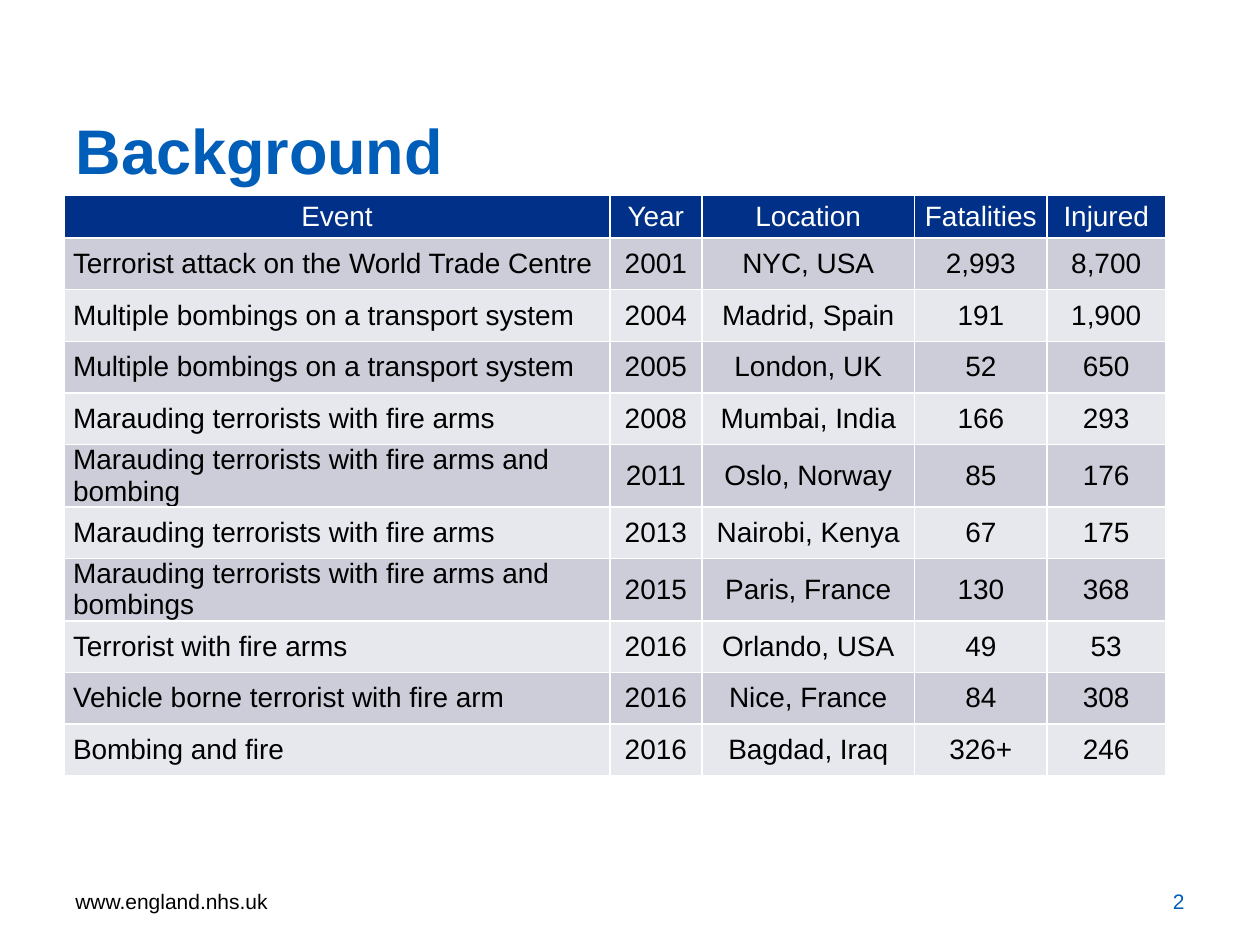
"""Build the Background slide: a table of terrorist events and their casualties."""
from pptx import Presentation
from pptx import util as u
from pptx.dml.color import RGBColor
from pptx.enum import text

BLUE = RGBColor(0x00, 0x5E, 0xB8)
NAVY = RGBColor(0x00, 0x30, 0x87)
BLACK = RGBColor(0x00, 0x00, 0x00)
WHITE = RGBColor(0xFF, 0xFF, 0xFF)
BANDS = [RGBColor(0xE7, 0xE8, 0xED), RGBColor(0xCC, 0xCD, 0xD9)]
LEFT, MID, RIGHT = text.PP_ALIGN.LEFT, text.PP_ALIGN.CENTER, text.PP_ALIGN.RIGHT

COLS = [4.33, 0.73, 1.69, 1.05, 0.94]
HEAD, ROW = 0.34, 0.41
EVENTS = [
    ("Event", "Year", "Location", "Fatalities", "Injured"),
    ("Terrorist attack on the World Trade Centre", "2001", "NYC, USA", "2,993", "8,700"),
    ("Multiple bombings on a transport system", "2004", "Madrid, Spain", "191", "1,900"),
    ("Multiple bombings on a transport system", "2005", "London, UK", "52", "650"),
    ("Marauding terrorists with fire arms", "2008", "Mumbai, India", "166", "293"),
    ("Marauding terrorists with fire arms and bombing", "2011", "Oslo, Norway", "85", "176"),
    ("Marauding terrorists with fire arms", "2013", "Nairobi, Kenya", "67", "175"),
    ("Marauding terrorists with fire arms and bombings", "2015", "Paris, France", "130", "368"),
    ("Terrorist with fire arms", "2016", "Orlando, USA", "49", "53"),
    ("Vehicle borne terrorist with fire arm", "2016", "Nice, France", "84", "308"),
    ("Bombing and fire", "2016", "Bagdad, Iraq", "326+", "246"),
]


def write(frame, words, size, color, align=LEFT, bold=False):
    """Put one styled paragraph in a text frame."""
    frame.text = words
    para = frame.paragraphs[0]
    para.alignment = align
    font = para.runs[0].font
    font.name, font.size, font.bold = "Arial", u.Pt(size), bold
    font.color.rgb = color


deck = Presentation()
deck.slide_width, deck.slide_height = u.Inches(10), u.Inches(7.5)
slide = deck.slides.add_slide(deck.slide_layouts[5])

title = slide.shapes.title
title.left, title.top = u.Inches(0.5), u.Inches(0.82)
title.width, title.height = u.Inches(8.05), u.Inches(0.73)
title.text_frame.vertical_anchor = text.MSO_ANCHOR.MIDDLE
write(title.text_frame, "Background", 36, BLUE, bold=True)

high = HEAD + ROW * (len(EVENTS) - 1)
grid = slide.shapes.add_table(
    len(EVENTS), len(COLS), u.Inches(0.51), u.Inches(1.55),
    u.Inches(sum(COLS)), u.Inches(high)).table
for col, wide in zip(grid.columns, COLS):
    col.width = u.Inches(wide)

for r, event in enumerate(EVENTS):
    grid.rows[r].height = u.Inches(ROW if r else HEAD)
    for c, words in enumerate(event):
        cell = grid.cell(r, c)
        cell.fill.solid()
        cell.fill.fore_color.rgb = BANDS[r % 2] if r else NAVY
        cell.vertical_anchor = text.MSO_ANCHOR.MIDDLE
        cell.margin_left = cell.margin_right = u.Inches(0.07)
        cell.margin_top = cell.margin_bottom = 0
        write(cell.text_frame, words, 16, BLACK if r else WHITE,
              LEFT if r and c == 0 else MID)

for left, words, color, align in [
    (0.5, "www.england.nhs.uk", BLACK, LEFT),
    (7.17, "2", BLUE, RIGHT),
]:
    box = slide.shapes.add_textbox(
        u.Inches(left), u.Inches(6.95), u.Inches(2.33), u.Inches(0.4))
    box.text_frame.word_wrap = True
    box.text_frame.vertical_anchor = text.MSO_ANCHOR.MIDDLE
    write(box.text_frame, words, 12, color, align)

deck.save("out.pptx")
